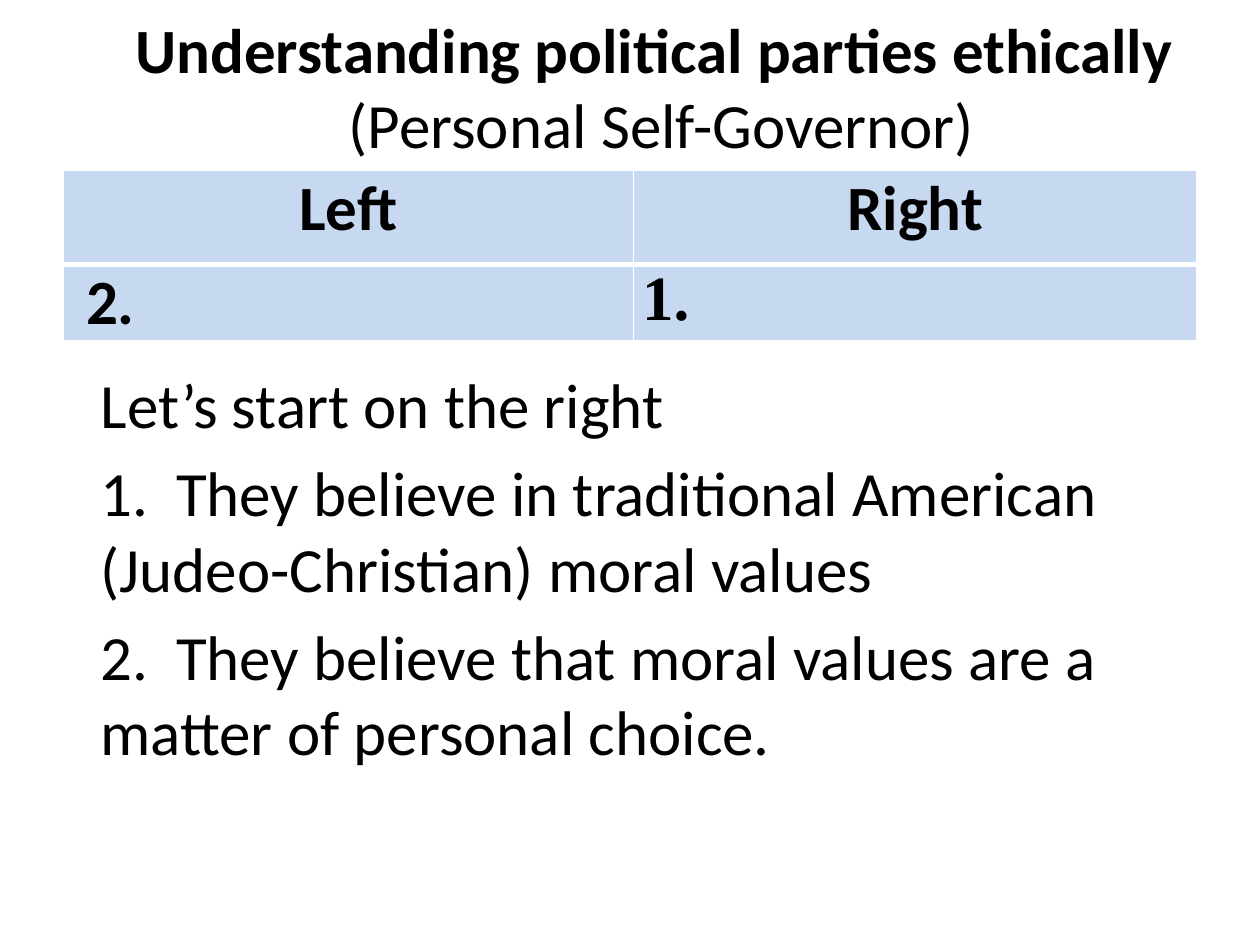
from lxml import etree
from pptx import Presentation
from pptx import util as u
from pptx.dml.color import RGBColor
from pptx.enum import text
from pptx.oxml.ns import qn

WIDTH, HEIGHT = u.Inches(10), u.Inches(7.5)
COLORS = {"ink": "000000", "cell": "C6D9F1", "rule": "FFFFFF"}
CENTER = text.PP_ALIGN.CENTER


def share(left, top, width, height):
    return [int(part * size) for part, size in
            zip((left, top, width, height), (WIDTH, HEIGHT) * 2)]


def place(shape, box):
    shape.left, shape.top, shape.width, shape.height = box


def write(para, words, size=36, bold=False, font="Calibri", align=None):
    span = para.add_run()
    span.text = words
    span.font.size = u.Pt(size)
    span.font.bold = bold
    span.font.name = font
    span.font.color.rgb = RGBColor.from_string(COLORS["ink"])
    if align is not None:
        para.alignment = align


def add_tab_stop(para, position):
    tabs = etree.SubElement(para._p.get_or_add_pPr(), qn("a:tabLst"))
    etree.SubElement(tabs, qn("a:tab"), pos=str(position), algn="l")


def border(cell, **widths):
    properties = cell._tc.get_or_add_tcPr()
    for index, side in enumerate(("lnL", "lnR", "lnT", "lnB")):
        line = etree.Element(qn(f"a:{side}"), w=str(u.Pt(widths.get(side, 1))))
        fill = etree.SubElement(line, qn("a:solidFill"))
        etree.SubElement(fill, qn("a:srgbClr"), val=COLORS["rule"])
        properties.insert(index, line)


def heading(page, box):
    title = page.shapes.title
    place(title, box)
    frame = title.text_frame
    frame.word_wrap = True
    frame.auto_size = text.MSO_AUTO_SIZE.NONE
    frame.vertical_anchor = text.MSO_ANCHOR.BOTTOM
    frame.margin_bottom = u.Inches(0.07)
    para = frame.paragraphs[0]
    write(para, "Understanding political parties ethically ", bold=True, align=CENTER)
    para.add_line_break()
    write(para, "(Personal Self-Governor)")


def beliefs(page, box):
    frame = page.shapes.add_textbox(*box).text_frame
    frame.word_wrap = True
    lines = ("Let’s start on the right",
             "1.\tThey believe in traditional American (Judeo-Christian) moral values",
             "2.\tThey believe that moral values are a matter of personal choice.")
    for index, words in enumerate(lines):
        para = frame.add_paragraph() if index else frame.paragraphs[0]
        if index:
            para.space_before = u.Pt(7.2)
            add_tab_stop(para, u.Inches(0.6))
        write(para, words)


def sides(page, box):
    rows = ((("Left", {"align": CENTER}), ("Right", {"align": CENTER})),
            ((" 2.", {}), ("1.", {"font": "Times New Roman"})))
    table = page.shapes.add_table(2, 2, *box).table
    for column, portion in zip(table.columns, (0.503, 0.497)):
        column.width = int(box[2] * portion)
    for row, portion in zip(table.rows, (5 / 9, 4 / 9)):
        row.height = int(box[3] * portion)
    for r, row in enumerate(rows):
        for c, (words, style) in enumerate(row):
            cell = table.cell(r, c)
            cell.margin_left = cell.margin_right = u.Inches(0.07)
            cell.margin_top = cell.margin_bottom = 0
            cell.fill.solid()
            cell.fill.fore_color.rgb = RGBColor.from_string(COLORS["cell"])
            border(cell, **{"lnT" if r else "lnB": 3})
            write(cell.text_frame.paragraphs[0], words, bold=True, **style)


def main():
    deck = Presentation()
    deck.slide_width, deck.slide_height = WIDTH, HEIGHT
    page = deck.slides.add_slide(deck.slide_layouts[5])
    heading(page, share(0, 0.08, 1.05, 0.1))
    beliefs(page, share(0.07, 0.38, 0.82, 0.49))
    sides(page, share(0.05, 0.18, 0.9, 0.18))
    deck.save("out.pptx")


if __name__ == "__main__":
    main()
